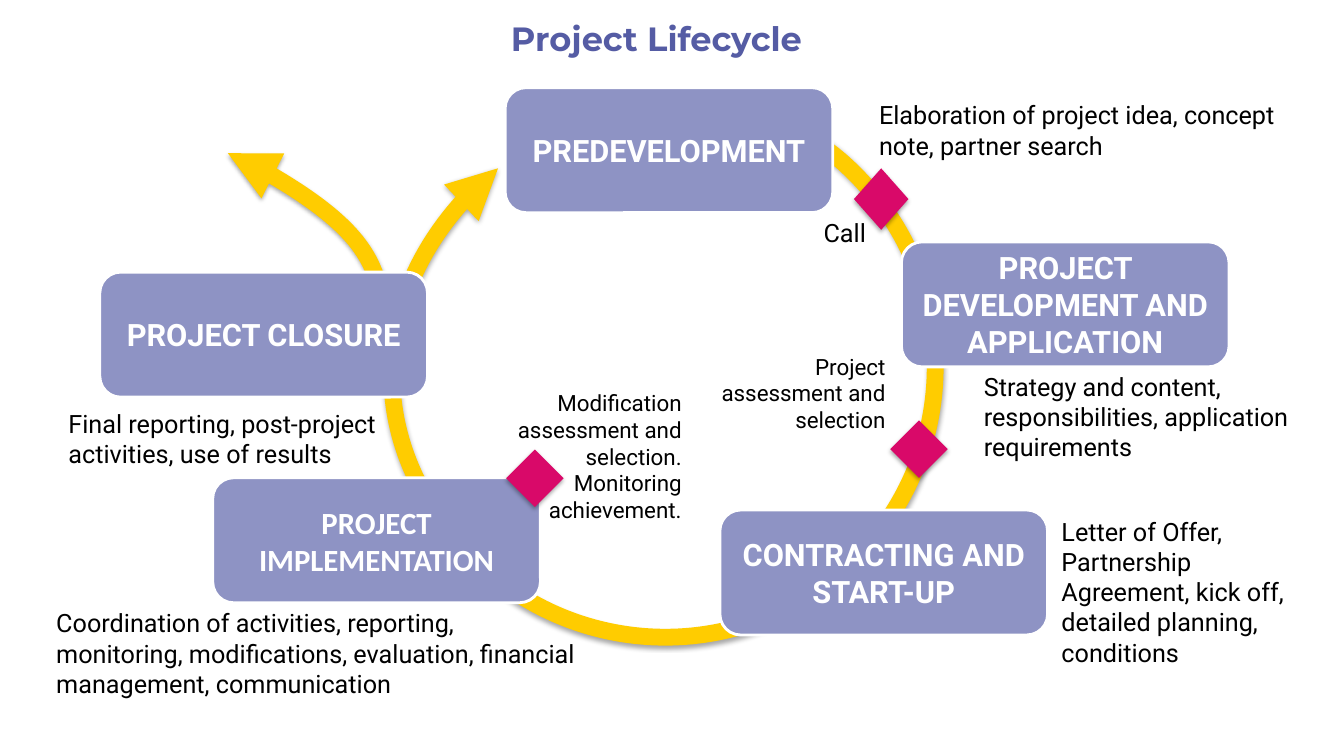
import pptx
import pptx.util
import pptx.dml.color
import pptx.enum.shapes
import pptx.enum.text
import pptx.oxml
import pptx.oxml.ns

Inches, Pt = pptx.util.Inches, pptx.util.Pt
SHAPE = pptx.enum.shapes.MSO_SHAPE
ALIGN = pptx.enum.text.PP_ALIGN
ANCHOR = pptx.enum.text.MSO_ANCHOR
qn = pptx.oxml.ns.qn

COLORS = {"title": "555CA4", "stage": "8E93C4", "cycle": "FFCC00",
          "milestone": "D90969", "text": "000000", "white": "FFFFFF"}


def color(name):
    return pptx.dml.color.RGBColor.from_string(COLORS[name])


def write(frame, *paragraphs, size=18, font="Roboto", ink="text", bold=False,
          align=ALIGN.LEFT, anchor=ANCHOR.TOP):
    frame.word_wrap = True
    frame.vertical_anchor = anchor
    for index, words in enumerate(paragraphs):
        paragraph = frame.add_paragraph() if index else frame.paragraphs[0]
        paragraph.alignment = align
        run = paragraph.add_run()
        run.text = words
        run.font.size, run.font.name, run.font.bold = Pt(size), font, bold
        run.font.color.rgb = color(ink)


class LifecycleSlide:
    stage_size = (3.25, 1.24)

    def __init__(self, deck):
        self.slide = deck.slides.add_slide(deck.slide_layouts[5])
        self.shapes = self.slide.shapes

    def title(self, words, left, top, width, height):
        title = self.shapes.title
        title.left, title.top = Inches(left), Inches(top)
        title.width, title.height = Inches(width), Inches(height)
        write(title.text_frame, words, size=24, font="Montserrat", ink="title",
              bold=True, align=ALIGN.CENTER, anchor=ANCHOR.MIDDLE)

    def cast_shadow(self, shape):
        shape.shadow.inherit = False
        effects = shape._element.spPr.find(qn("a:effectLst"))
        effects.append(pptx.oxml.parse_xml(
            f'<a:outerShdw {pptx.oxml.ns.nsdecls("a")} blurRad="40000" dist="23000" '
            'dir="5400000" rotWithShape="0"><a:srgbClr val="000000">'
            '<a:alpha val="35000"/></a:srgbClr></a:outerShdw>'))

    def curved_arrow(self, start, *points):
        """Draw Bezier curves; each three points are two controls and an end."""
        builder = self.shapes.build_freeform(Inches(start[0]), Inches(start[1]))
        builder.add_line_segments([(Inches(x), Inches(y)) for x, y in points], close=False)
        arrow = builder.convert_to_shape()
        outline = next(arrow._element.iter(qn("a:path")))
        outline.set("fill", "none")
        segments = outline.findall(qn("a:lnTo"))
        for first in range(0, len(segments), 3):
            curve = outline.makeelement(qn("a:cubicBezTo"), {})
            for segment in segments[first:first + 3]:
                curve.append(segment[0])
                outline.remove(segment)
            outline.append(curve)
        arrow.fill.background()
        arrow.line.color.rgb = color("cycle")
        arrow.line.width = Pt(12)
        for end in ("a:headEnd", "a:tailEnd"):
            line = arrow.line._get_or_add_ln()
            line.append(line.makeelement(qn(end), {"type": "triangle"}))
        self.cast_shadow(arrow)

    def stage(self, words, left, top, font="Roboto", parent=None):
        width, height = self.stage_size
        stage = (parent or self.shapes).add_shape(
            SHAPE.ROUNDED_RECTANGLE, Inches(left), Inches(top), Inches(width), Inches(height))
        stage.shadow.inherit = False
        stage.fill.solid()
        stage.fill.fore_color.rgb = color("stage")
        stage.line.color.rgb = color("white")
        stage.line.width = Pt(2)
        write(stage.text_frame, words, size=22, font=font, ink="white", bold=True,
              align=ALIGN.CENTER, anchor=ANCHOR.MIDDLE)

    def milestone(self, left, top, width=0.57, height=0.57, parent=None):
        milestone = (parent or self.shapes).add_shape(
            SHAPE.DIAMOND, Inches(left), Inches(top), Inches(width), Inches(height))
        milestone.fill.solid()
        milestone.fill.fore_color.rgb = color("milestone")
        milestone.line.fill.background()
        self.cast_shadow(milestone)

    def note(self, left, top, width, height, *paragraphs, **style):
        note = self.shapes.add_textbox(Inches(left), Inches(top), Inches(width), Inches(height))
        write(note.text_frame, *paragraphs, **style)
        note.text_frame.auto_size = pptx.enum.text.MSO_AUTO_SIZE.SHAPE_TO_FIT_TEXT


def main():
    deck = pptx.Presentation()
    deck.slide_width, deck.slide_height = Inches(13.33), Inches(7.5)
    lifecycle = LifecycleSlide(deck)
    lifecycle.title("Project Lifecycle", 0.44, -0.14, 12.14, 1.04)

    # Cycle and exit arrows
    lifecycle.curved_arrow(
        (5.43, 1.75),
        (6.76, 1.64), (7.57, 0.73), (8.57, 1.82),
        (9.57, 2.92), (9.5, 4.61), (8.41, 5.62),
        (7.31, 6.62), (5.62, 6.54), (4.61, 5.45),
        (3.61, 4.36), (3.69, 2.66), (4.94, 1.67))
    lifecycle.curved_arrow((3.83, 3.76), (3.91, 3.2), (3.73, 2.15), (2.26, 1.52))

    # Stages
    for words, left, top in [
            ("PROJECT DEVELOPMENT AND APPLICATION", 8.94, 2.4),
            ("CONTRACTING AND START-UP", 7.14, 5.06),
            ("PROJECT CLOSURE", 0.99, 2.7),
            ("PREDEVELOPMENT", 5.01, 0.87)]:
        lifecycle.stage(words, left, top)

    # Stage descriptions
    for box, words in [
            ((8.62, 0.94, 4.18, 0.71),
             "Elaboration of project idea, concept note, partner search"),
            ((9.66, 3.63, 3.6, 1.01),
             "Strategy and content, responsibilities, application requirements"),
            ((10.43, 5.07, 2.67, 1.62),
             "Letter of Offer, Partnership Agreement, kick off, detailed planning, conditions"),
            ((0.46, 5.98, 5.37, 1.01),
             "Coordination of activities, reporting, monitoring, modifications, "
             "evaluation, financial management, communication"),
            ((0.58, 4, 3.71, 0.71),
             "Final reporting, post-project activities, use of results")]:
        lifecycle.note(*box, words)

    # Milestones and their labels
    lifecycle.milestone(8.47, 1.67, 0.54, 0.61)
    lifecycle.milestone(8.83, 4.17)
    lifecycle.note(8.07, 2.11, 0.77, 0.4, "Call")
    lifecycle.note(6.89, 3.45, 1.99, 0.91, "Project assessment and selection",
                   size=16, align=ALIGN.RIGHT)

    # Implementation stage grouped with its milestone
    implementation = lifecycle.shapes.add_group_shape().shapes
    lifecycle.stage("PROJECT IMPLEMENTATION", 2.11, 4.74, font="Calibri", parent=implementation)
    lifecycle.milestone(5.02, 4.46, parent=implementation)
    lifecycle.note(4.85, 3.81, 2.01, 1.45, "Modification assessment and selection.",
                   "Monitoring achievement.", size=16, align=ALIGN.RIGHT)

    deck.save("out.pptx")


if __name__ == "__main__":
    main()
